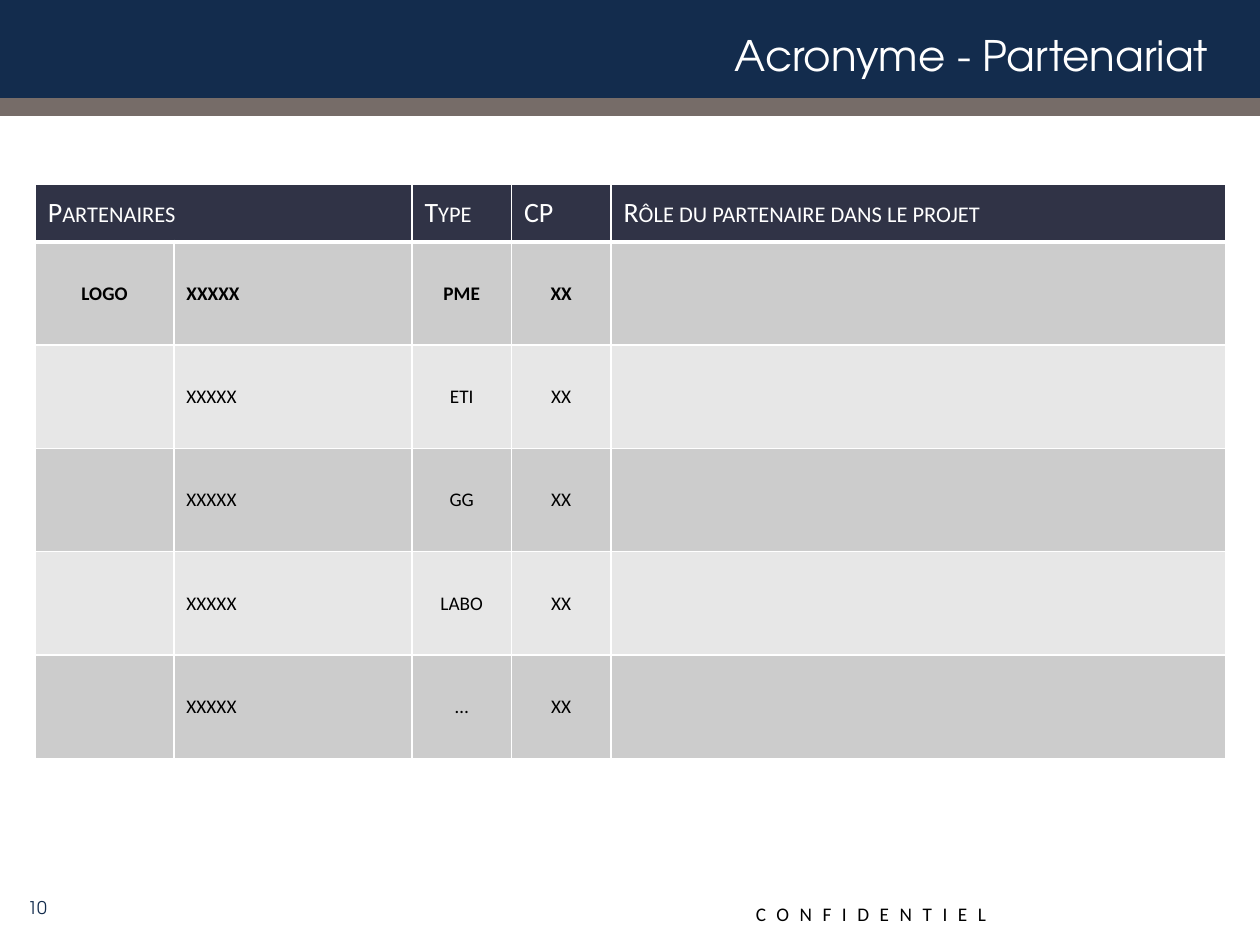
from lxml.etree import SubElement
from pptx import Presentation
from pptx.dml.color import RGBColor
from pptx.enum.shapes import MSO_SHAPE
from pptx.enum.text import MSO_ANCHOR, PP_ALIGN
from pptx.oxml.ns import qn
from pptx.util import Inches, Pt

NAVY = RGBColor(0x13, 0x2C, 0x4D)
TAUPE = RGBColor(0x76, 0x6C, 0x68)
SLATE = RGBColor(0x30, 0x33, 0x46)
GREY = RGBColor(0xCC, 0xCC, 0xCC)
LIGHT_GREY = RGBColor(0xE7, 0xE7, 0xE7)
WHITE = RGBColor(0xFF, 0xFF, 0xFF)
BLACK = RGBColor(0, 0, 0)

DISPLAY, BODY = "TeX Gyre Adventor", "Calibri"
TITLE = "Acronyme - Partenariat "
PAGE = "10"
NOTICE = "CONFIDENTIEL"

HEADER = ["Partenaires", "", "Type", "CP", "Rôle du partenaire dans le projet"]
PARTNERS = [
    ["LOGO", "XXXXX", "PME", "XX", ""],
    ["", "XXXXX", "ETI", "XX", ""],
    ["", "XXXXX", "GG", "XX", ""],
    ["", "XXXXX", "LABO", "XX", ""],
    ["", "XXXXX", "…", "XX", ""],
]
COLUMN_WIDTHS = [1.1, 1.89, 0.79, 0.79, 4.88]
ROW_HEIGHTS = [0.46] + [0.82] * len(PARTNERS)
CENTRED_COLUMNS = {0, 2, 3}


def write(frame, text, size, color, font=BODY, align=PP_ALIGN.LEFT, bold=False,
          small_caps=False, spacing=0):
    paragraph = frame.paragraphs[0]
    paragraph.alignment = align
    run = paragraph.add_run()
    run.text = text
    run.font.name = font
    run.font.size = Pt(size)
    run.font.bold = bold
    run.font.color.rgb = color
    if small_caps:
        run.font._element.set("cap", "small")
    if spacing:
        run.font._element.set("spc", str(spacing * 100))


def add_band(slide, top, height, color):
    band = slide.shapes.add_shape(MSO_SHAPE.RECTANGLE, 0, Inches(top), Inches(10), Inches(height))
    band.shadow.inherit = False
    band.fill.solid()
    band.fill.fore_color.rgb = color
    band.line.fill.background()


def add_label(slide, box, text, size, color, anchor=MSO_ANCHOR.MIDDLE, wrap=True, **style):
    frame = slide.shapes.add_textbox(*map(Inches, box)).text_frame
    frame.word_wrap = wrap
    frame.vertical_anchor = anchor
    write(frame, text, size, color, **style)


def style_cell(cell, fill, bottom):
    properties = cell._tc.get_or_add_tcPr()
    for side, width in (("L", 1), ("R", 1), ("T", 1), ("B", bottom)):
        border = SubElement(properties, qn(f"a:ln{side}"), w=str(Pt(width)))
        SubElement(SubElement(border, qn("a:solidFill")), qn("a:srgbClr"), val=str(WHITE))
    cell.fill.solid()
    cell.fill.fore_color.rgb = fill
    cell.vertical_anchor = MSO_ANCHOR.MIDDLE


def add_partners(slide):
    rows = [HEADER] + PARTNERS
    table = slide.shapes.add_table(
        len(rows), len(HEADER), Inches(0.28), Inches(1.46),
        Inches(sum(COLUMN_WIDTHS)), Inches(sum(ROW_HEIGHTS))).table
    for column, width in zip(table.columns, COLUMN_WIDTHS):
        column.width = Inches(width)
    for row, height in zip(table.rows, ROW_HEIGHTS):
        row.height = Inches(height)
    table.cell(0, 0).merge(table.cell(0, 1))

    for r, row in enumerate(rows):
        heading = r == 0
        fill = SLATE if heading else (LIGHT_GREY, GREY)[r % 2]
        for c, text in enumerate(row):
            cell = table.cell(r, c)
            style_cell(cell, fill, bottom=3 if heading else 1)
            if not text:
                continue
            if heading:
                write(cell.text_frame, text, 16, WHITE, small_caps=True)
            else:
                align = PP_ALIGN.CENTER if c in CENTRED_COLUMNS else PP_ALIGN.LEFT
                write(cell.text_frame, text, 11, BLACK, align=align, bold=r == 1)


def main():
    deck = Presentation()
    deck.slide_width, deck.slide_height = Inches(10), Inches(7.5)
    slide = deck.slides.add_slide(deck.slide_layouts[6])
    add_band(slide, 0, 0.9, NAVY)
    add_band(slide, 0.78, 0.14, TAUPE)
    add_label(slide, (5.9, 7.11, 2.13, 0.29), NOTICE, 11, BLACK,
              anchor=MSO_ANCHOR.TOP, wrap=False, spacing=6)
    add_label(slide, (0.15, 0.14, 9.63, 0.58), TITLE, 24, WHITE,
              font=DISPLAY, align=PP_ALIGN.RIGHT)
    add_label(slide, (-0.04, 7, 0.51, 0.4), PAGE, 10, NAVY,
              font=DISPLAY, align=PP_ALIGN.RIGHT)
    add_partners(slide)
    deck.save("out.pptx")


if __name__ == "__main__":
    main()
